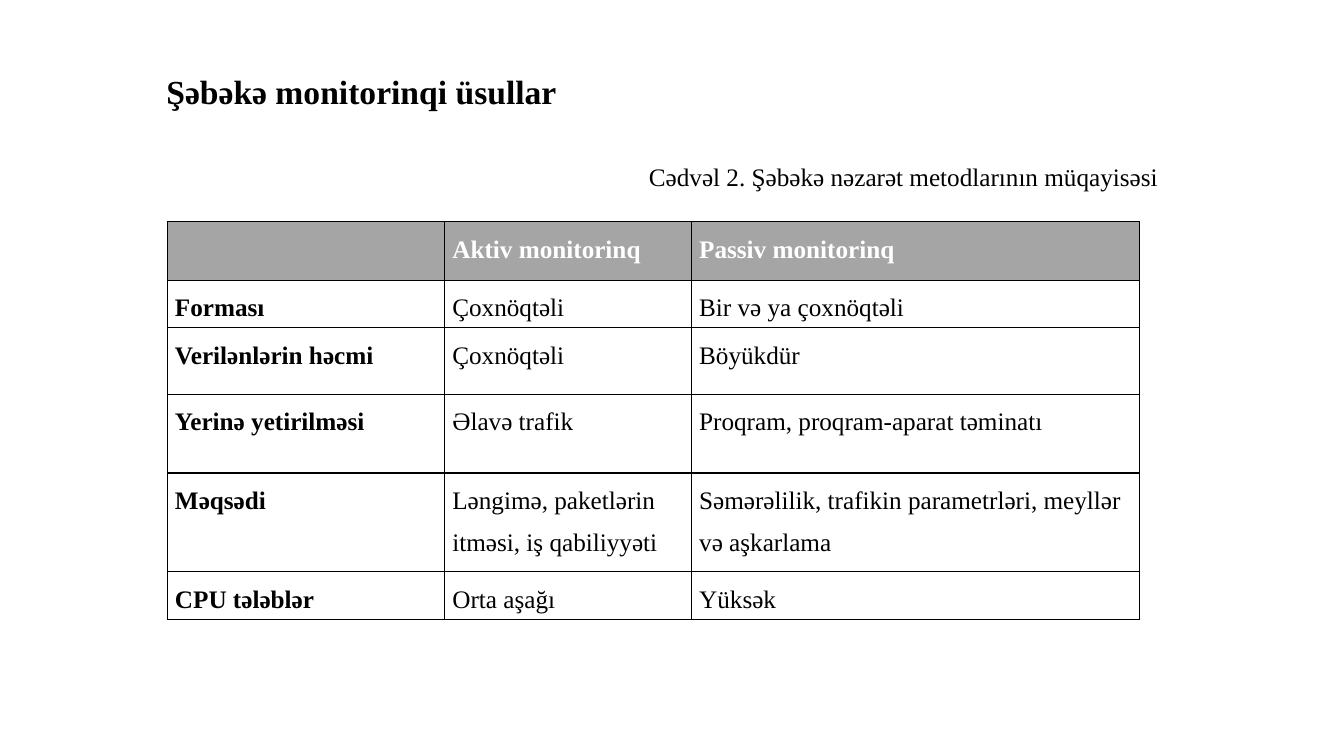
from dataclasses import dataclass

from lxml.etree import SubElement
from pptx import Presentation
from pptx.dml.color import RGBColor as Rgb
from pptx.enum.text import MSO_ANCHOR as Anchor, MSO_AUTO_SIZE as Fit, PP_ALIGN as Align
from pptx.oxml.ns import qn
from pptx.util import Cm, Pt


@dataclass(frozen=True)
class Theme:
    font: str = "Times New Roman"
    ink: str = "000000"
    paper: str = "FFFFFF"
    band: str = "A5A5A5"
    title: int = 24
    body: int = 18
    line: int = 1


THEME = Theme()
COLS = (6.99, 6.22, 11.28)
ROWS = (
    (1.47, ("", "Aktiv monitorinq", "Passiv monitorinq")),
    (1.2, ("Forması", "Çoxnöqtəli", "Bir və ya çoxnöqtəli")),
    (1.68, ("Verilənlərin həcmi", "Çoxnöqtəli", "Böyükdür")),
    (1.98, ("Yerinə yetirilməsi", "Əlavə trafik", "Proqram, proqram-aparat təminatı")),
    (2.49, ("Məqsədi", "Ləngimə, paketlərin itməsi, iş qabiliyyəti",
            "Səmərəlilik, trafikin parametrləri, meyllər və aşkarlama")),
    (1.2, ("CPU tələblər", "Orta aşağı", "Yüksək")),
)


def write(frame, text, size=THEME.body, color=THEME.ink, bold=False, align=Align.LEFT):
    frame.text = text
    para = frame.paragraphs[0]
    para.alignment = align
    para.line_spacing = 1.5
    para.space_after = Pt(8)
    for run in para.runs:
        font = run.font
        font.name = THEME.font
        font.size = Pt(size)
        font.bold = bold
        font.color.rgb = Rgb.from_string(color)


def outline(cell):
    """Draw the four borders of a cell; they must precede its fill in the XML."""
    props = cell._tc.get_or_add_tcPr()
    for side in ("lnL", "lnR", "lnT", "lnB"):
        edge = SubElement(props, qn(f"a:{side}"), w=str(Pt(THEME.line)))
        fill = SubElement(edge, qn("a:solidFill"))
        SubElement(fill, qn("a:srgbClr"), val=THEME.ink)


def add_title(slide, left, top, width, height):
    title = slide.shapes.title
    title.left, title.top, title.width, title.height = map(Cm, (left, top, width, height))
    frame = title.text_frame
    frame.auto_size = Fit.NONE
    frame.vertical_anchor = Anchor.BOTTOM
    write(frame, "Şəbəkə monitorinqi üsullar", THEME.title, bold=True)


def add_caption(slide, left, top, width, height):
    box = slide.shapes.add_textbox(*map(Cm, (left, top, width, height)))
    frame = box.text_frame
    frame.word_wrap = True
    frame.auto_size = Fit.SHAPE_TO_FIT_TEXT
    write(frame, "Cədvəl 2. Şəbəkə nəzarət metodlarının müqayisəsi", align=Align.RIGHT)


def add_grid(slide, left, top):
    width, height = sum(COLS), sum(tall for tall, _ in ROWS)
    table = slide.shapes.add_table(
        len(ROWS), len(COLS), *map(Cm, (left, top, width, height))).table
    for col, wide in zip(table.columns, COLS):
        col.width = Cm(wide)
    for r, (tall, texts) in enumerate(ROWS):
        table.rows[r].height = Cm(tall)
        head = r == 0
        for c, text in enumerate(texts):
            cell = table.cell(r, c)
            cell.margin_left = cell.margin_right = Cm(0.19)
            cell.margin_top = cell.margin_bottom = 0
            outline(cell)
            cell.fill.solid()
            cell.fill.fore_color.rgb = Rgb.from_string(THEME.band if head else THEME.paper)
            write(cell.text_frame, text, color=THEME.paper if head else THEME.ink,
                  bold=head or c == 0)


def main():
    deck = Presentation()
    deck.slide_width, deck.slide_height = Cm(33.87), Cm(19.05)
    slide = deck.slides.add_slide(deck.slide_layouts[5])
    add_title(slide, 3.94, 0.86, 27.91, 2.06)
    add_grid(slide, 4.22, 5.59)
    add_caption(slide, 12.5, 3.56, 16.94, 1.3)
    deck.save("out.pptx")


if __name__ == "__main__":
    main()
